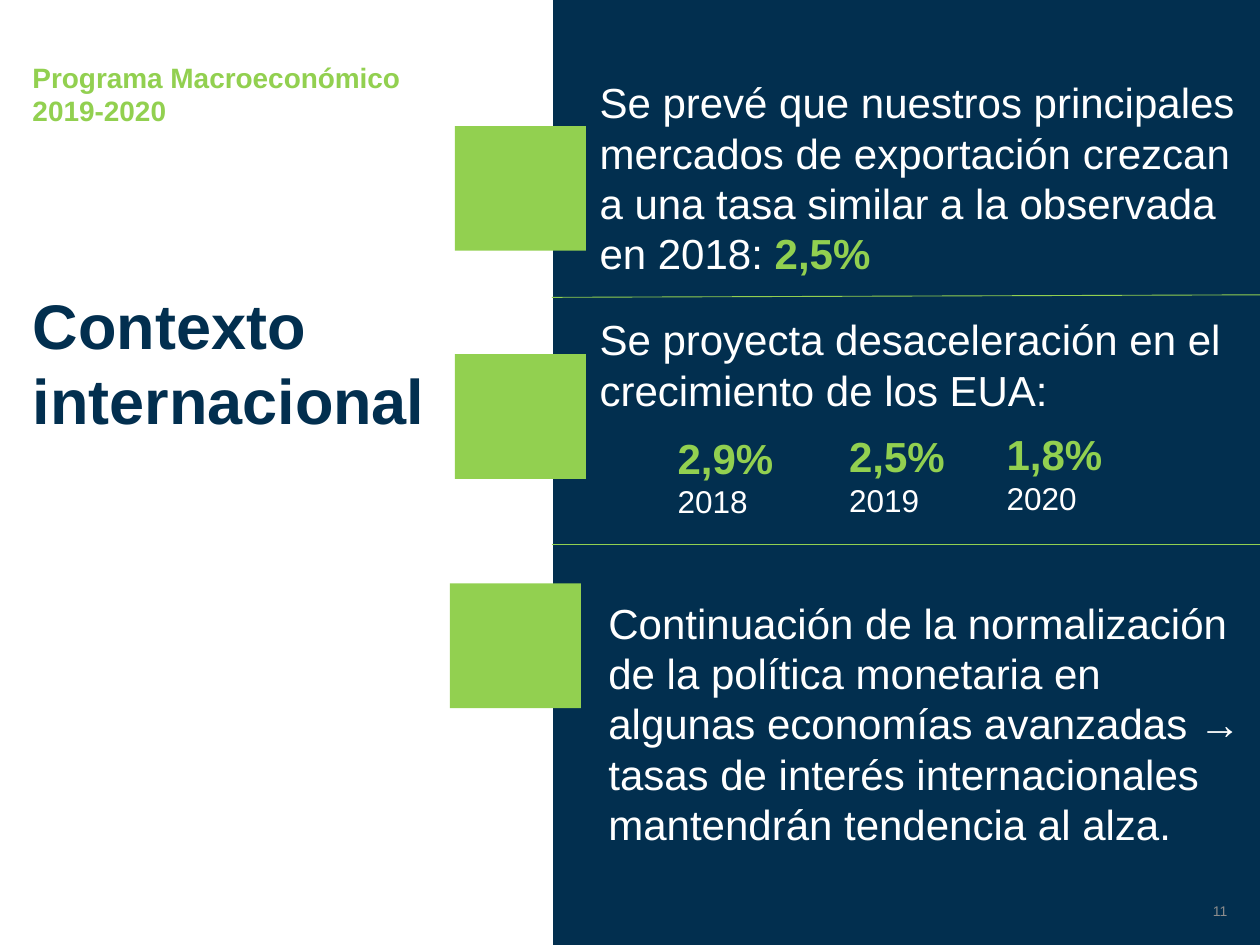
import dataclasses

import pptx
import pptx.dml.color
import pptx.enum.shapes
import pptx.enum.text
import pptx.oxml
import pptx.util

Inches = pptx.util.Inches
Pt = pptx.util.Pt
RGB = pptx.dml.color.RGBColor.from_string
Align = pptx.enum.text.PP_ALIGN
Anchor = pptx.enum.text.MSO_ANCHOR
Fit = pptx.enum.text.MSO_AUTO_SIZE


@dataclasses.dataclass(frozen=True)
class Theme:
    font: str = "Arial"
    navy: str = "022F4F"
    green: str = "92D050"
    white: str = "FFFFFF"
    gray: str = "8C8C8C"
    title: int = 36
    body: int = 24
    year: int = 18
    head: int = 16
    note: int = 8


THEME = Theme()
BODY = (THEME.body, THEME.white, False)
RATE = (THEME.body, THEME.green, True)
YEAR = (THEME.year, THEME.white, False)
HEAD = (THEME.head, THEME.green, True)
TITLE = (THEME.title, THEME.navy, True)
NOTE = (THEME.note, THEME.gray, False)


def apply(item, values):
    for name, value in values.items():
        setattr(item, name, value)


def write(shape, paras, align=Align.LEFT, **frame):
    """Fill a shape with paragraphs, each a list of (text, style) runs."""
    text = shape.text_frame
    apply(text, {"word_wrap": True, "auto_size": Fit.SHAPE_TO_FIT_TEXT,
                 "vertical_anchor": Anchor.TOP} | frame)
    for i, runs in enumerate(paras):
        para = text.paragraphs[0] if i == 0 else text.add_paragraph()
        para.alignment = align
        for words, (size, color, bold) in runs:
            run = para.add_run()
            run.text = words
            apply(run.font, {"name": THEME.font, "size": Pt(size), "bold": bold})
            run.font.color.rgb = RGB(color)


def add_text(slide, box, paras, **frame):
    write(slide.shapes.add_textbox(*map(Inches, box)), paras, **frame)


def add_block(slide, box, color):
    kind = pptx.enum.shapes.MSO_SHAPE.RECTANGLE
    block = slide.shapes.add_shape(kind, *map(Inches, box))
    block.shadow.inherit = False
    block.fill.solid()
    block.fill.fore_color.rgb = RGB(color)
    block.line.fill.background()


def add_rule(slide, start, end):
    kind = pptx.enum.shapes.MSO_CONNECTOR.STRAIGHT
    rule = slide.shapes.add_connector(kind, *map(Inches, start + end))
    rule.line.width = Pt(0.5)
    rule.line.color.rgb = RGB(THEME.green)
    props = rule._element.spPr
    props.append(pptx.oxml.parse_xml(
        '<a:effectLst xmlns:a="http://schemas.openxmlformats.org/drawingml/2006/main"/>'))


def add_title(slide, box, words):
    title = slide.shapes.title
    apply(title, dict(zip(("left", "top", "width", "height"), map(Inches, box))))
    write(title, [[(words, TITLE)]])


def main():
    deck = pptx.Presentation()
    apply(deck, {"slide_width": Inches(10), "slide_height": Inches(7.5)})
    slide = deck.slides.add_slide(deck.slide_layouts[5])

    add_block(slide, (4.39, 0, 5.61, 7.5), THEME.navy)
    add_title(slide, (0.16, 2.22, 3.64, 1.31), "Contexto internacional")
    add_text(slide, (0.16, 0.43, 3.16, 0.64),
             [[("Programa Macroeconómico", HEAD)], [("2019-2020", HEAD)]],
             word_wrap=False)

    add_rule(slide, (4.38, 2.36), (10, 2.34))
    add_rule(slide, (4.38, 4.32), (10, 4.32))
    for left, top in ((3.61, 1), (3.61, 2.81), (3.57, 4.63)):
        add_block(slide, (left, top, 1.04, 0.99), THEME.green)

    add_text(slide, (4.66, 0.56, 5.35, 1.72), [
        [("Se prevé que nuestros principales mercados de exportación crezcan", BODY)],
        [("a una tasa similar a la observada en 2018: ", BODY), ("2,5%", RATE)]])
    add_text(slide, (4.66, 2.44, 5.29, 0.91), [
        [("Se proyecta desaceleración en el crecimiento de los EUA:", BODY)]])
    add_text(slide, (4.73, 4.69, 5.29, 2.52), [
        [("Continuación de la normalización de la política monetaria en algunas "
          "economías avanzadas → tasas de interés internacionales mantendrán "
          "tendencia al alza.", BODY)]])

    rates = ((5.28, 3.38, "2,9%", "2018"),
             (6.64, 3.37, "2,5%", "2019"),
             (7.89, 3.35, "1,8%", "2020"))
    for left, top, rate, year in rates:
        add_text(slide, (left, top, 0.97, 0.81),
                 [[(rate, RATE)], [(year, YEAR)]], word_wrap=False)

    add_text(slide, (7.06, 7.03, 2.78, 0.4), [[("11", NOTE)]], align=Align.RIGHT,
             auto_size=Fit.NONE, vertical_anchor=Anchor.MIDDLE)
    deck.save("out.pptx")


if __name__ == "__main__":
    main()
